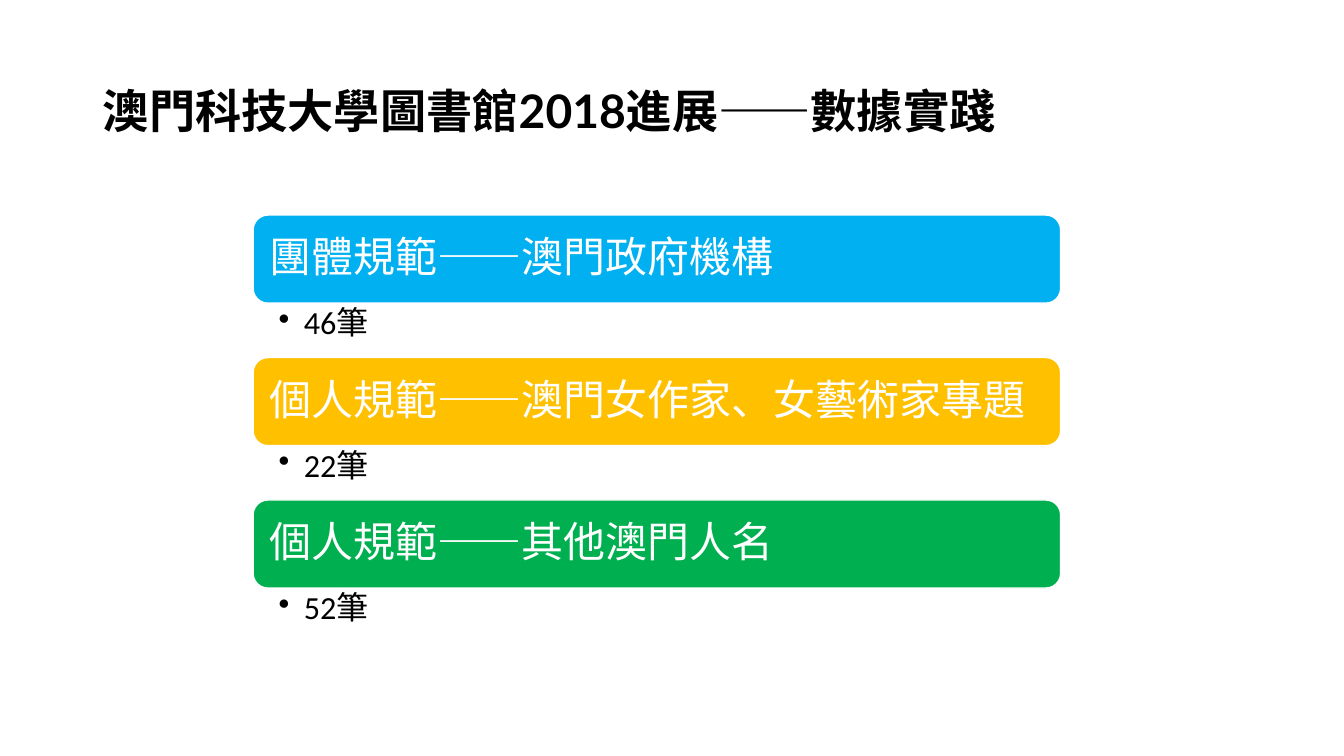
from lxml.etree import SubElement
from pptx import Presentation
from pptx.dml.color import RGBColor
from pptx.enum.shapes import MSO_SHAPE
from pptx.enum.text import MSO_ANCHOR, MSO_AUTO_SIZE, PP_ALIGN
from pptx.oxml.ns import qn
from pptx.util import Cm, Pt

WHITE = RGBColor(0xFF, 0xFF, 0xFF)
BLACK = RGBColor(0x00, 0x00, 0x00)
BLUE = RGBColor(0x00, 0xB0, 0xF0)
AMBER = RGBColor(0xFF, 0xC0, 0x00)
GREEN = RGBColor(0x00, 0xB0, 0x50)

TITLE = "澳門科技大學圖書館2018進展——數據實踐"
SECTIONS = [
    ("團體規範——澳門政府機構", "46筆", BLUE),
    ("個人規範——澳門女作家、女藝術家專題", "22筆", AMBER),
    ("個人規範——其他澳門人名", "52筆", GREEN),
]
BAR_HEIGHT = Cm(2.22)
COUNT_HEIGHT = Cm(1.37)


def write_text(frame, text, font_name, size, color, anchor, bold=False):
    """Write one left-aligned line into a text frame and return its paragraph."""
    frame.word_wrap = True
    frame.auto_size = MSO_AUTO_SIZE.NONE
    frame.vertical_anchor = anchor
    paragraph = frame.paragraphs[0]
    paragraph.alignment = PP_ALIGN.LEFT
    paragraph.line_spacing = 0.9
    run = paragraph.add_run()
    run.text = text
    run.font.name = font_name
    run.font.size = Pt(size)
    run.font.bold = bold
    run.font.color.rgb = color
    return paragraph


def set_margins(frame, left, top, right, bottom):
    """Set the four inner margins of a text frame."""
    frame.margin_left, frame.margin_top = left, top
    frame.margin_right, frame.margin_bottom = right, bottom


def add_bullet(paragraph, indent):
    """Give a paragraph a round bullet with a hanging indent."""
    properties = paragraph._p.get_or_add_pPr()
    properties.set("marL", str(indent))
    properties.set("indent", str(-indent))
    SubElement(properties, qn("a:buChar")).set("char", "•")


def place_title(slide, left, top, width, height):
    """Move the title placeholder into its box and fill it."""
    title = slide.shapes.title
    title.left, title.top, title.width, title.height = left, top, width, height
    write_text(title.text_frame, TITLE, "Lato", 33, BLACK, MSO_ANCHOR.MIDDLE, bold=True)


def add_bar(slide, left, top, width, text, color):
    """Add one coloured heading bar."""
    bar = slide.shapes.add_shape(MSO_SHAPE.ROUNDED_RECTANGLE, left, top, width, BAR_HEIGHT)
    bar.shadow.inherit = False
    bar.fill.solid()
    bar.fill.fore_color.rgb = color
    bar.line.color.rgb = WHITE
    bar.line.width = Pt(1)
    set_margins(bar.text_frame, *[Cm(0.3)] * 4)
    write_text(bar.text_frame, text, "Calibri", 30, WHITE, MSO_ANCHOR.MIDDLE)


def add_count(slide, left, top, width, text):
    """Add the bulleted record count below a bar."""
    box = slide.shapes.add_textbox(left, top, width, COUNT_HEIGHT)
    set_margins(box.text_frame, Cm(0.64), Cm(0.1), Cm(0.58), Cm(0.1))
    paragraph = write_text(box.text_frame, text, "Calibri", 23, BLACK, MSO_ANCHOR.TOP)
    add_bullet(paragraph, Cm(0.64))


def add_sections(slide, left, top, width):
    """Stack the heading bars and their counts from the top of the region."""
    for index, (heading, count, color) in enumerate(SECTIONS):
        bar_top = top + index * (BAR_HEIGHT + COUNT_HEIGHT)
        add_bar(slide, left, bar_top, width, heading, color)
        add_count(slide, left, bar_top + BAR_HEIGHT, width, count)


def main():
    """Build the slide and save the presentation."""
    presentation = Presentation()
    presentation.slide_width = Cm(33.87)
    presentation.slide_height = Cm(19.05)
    slide = presentation.slides.add_slide(presentation.slide_layouts[5])
    place_title(slide, Cm(2.34), Cm(1.02), Cm(29.21), Cm(3.68))
    add_sections(slide, Cm(6.38), Cm(5.42), Cm(20.35))
    presentation.save("out.pptx")


if __name__ == "__main__":
    main()
